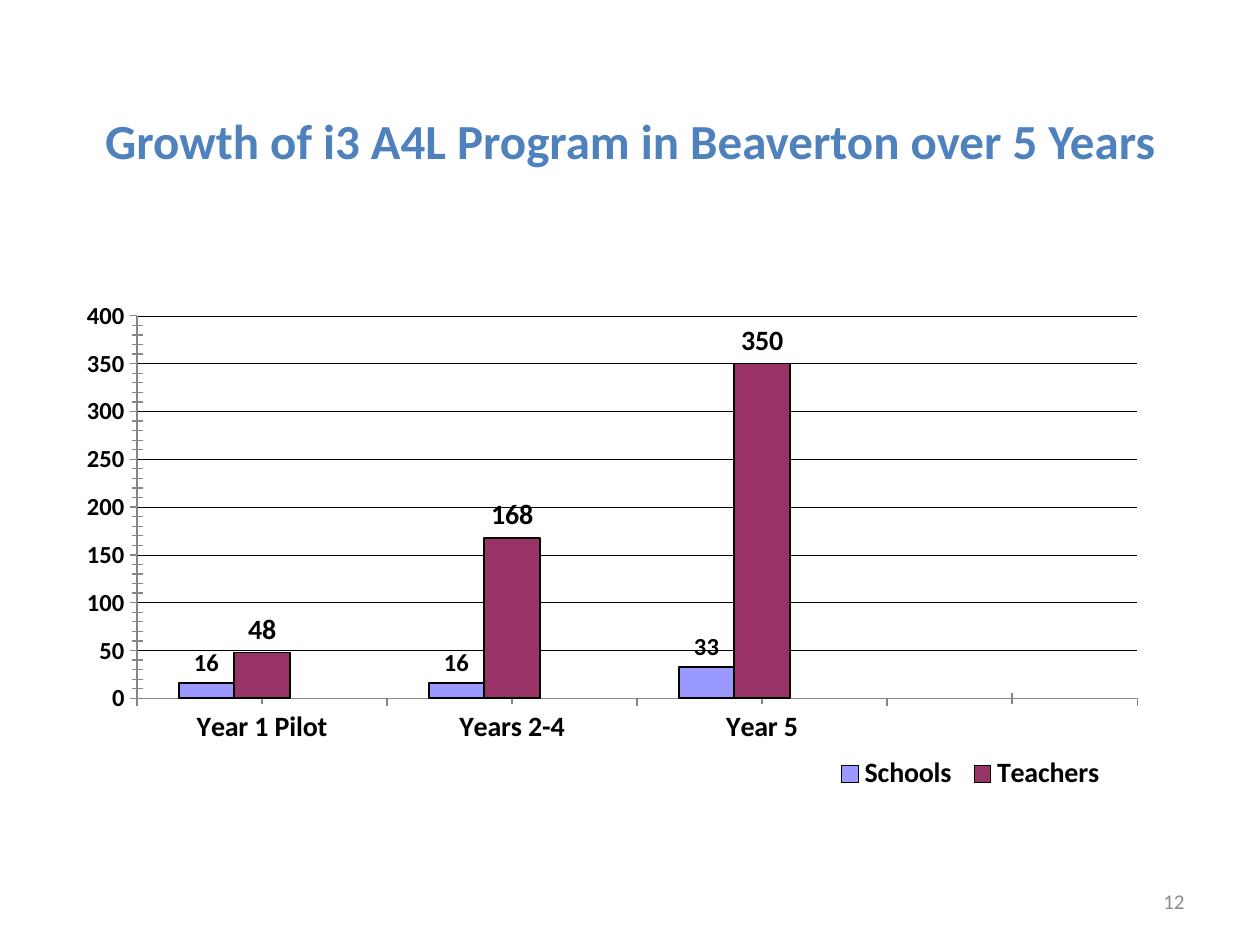
"""Build the slide on program growth with a clustered column chart."""
from dataclasses import dataclass
from typing import Optional

from lxml.etree import SubElement
from pptx import Presentation
from pptx.chart.data import CategoryChartData
from pptx.dml.color import RGBColor
from pptx.enum.chart import XL_CHART_TYPE as ChartType
from pptx.enum.chart import XL_LABEL_POSITION as LabelPosition
from pptx.enum.chart import XL_LEGEND_POSITION as LegendPosition
from pptx.enum.chart import XL_TICK_MARK as TickMark
from pptx.enum.text import MSO_ANCHOR as Anchor
from pptx.enum.text import PP_ALIGN as Align
from pptx.oxml.ns import qn
from pptx.util import Pt

FONT = "Calibri"
BLACK = "000000"
AXIS_GRAY = "868686"


@dataclass
class Box:
    left: float
    top: float
    width: float
    height: float

    def lengths(self):
        return [Pt(value) for value in (self.left, self.top, self.width, self.height)]


@dataclass
class ColumnSeries:
    name: str
    values: list[Optional[int]]
    color: str
    label_size: float


CATEGORIES = ["Year 1 Pilot", "Years 2-4", "Year 5", ""]
SERIES = [
    ColumnSeries("Schools", [16, 16, 33, None], "9999FF", 14),
    ColumnSeries("Teachers", [48, 168, 350, None], "993366", 16),
    ColumnSeries("Series 3", [None] * 4, "FFFFCC", 8),
]


def rgb(color: str) -> RGBColor:
    return RGBColor.from_string(color)


def format_font(font, size: float, color: str = BLACK, bold: bool = True) -> None:
    font.name, font.size, font.bold = FONT, Pt(size), bold
    font.color.rgb = rgb(color)


def format_line(line, width: float, color: str) -> None:
    line.width = Pt(width)
    line.color.rgb = rgb(color)


def write_text(shape, text: str, *, size: float, color: str,
               bold: bool = False, align=Align.LEFT) -> None:
    frame = shape.text_frame
    frame.word_wrap = True
    frame.vertical_anchor = Anchor.MIDDLE
    paragraph = frame.paragraphs[0]
    paragraph.alignment = align
    run = paragraph.add_run()
    run.text = text
    format_font(run.font, size, color, bold)


def set_layout(parent, index: int, fractions: dict[str, float], inner: bool = False) -> None:
    for old in parent.findall(qn("c:layout")):
        parent.remove(old)
    layout = SubElement(parent, qn("c:layout"))
    parent.insert(index, layout)
    manual = SubElement(layout, qn("c:manualLayout"))
    settings = {"layoutTarget": "inner"} if inner else {}
    settings |= {"xMode": "edge", "yMode": "edge"} | fractions
    for tag, value in settings.items():
        SubElement(manual, qn(f"c:{tag}")).set("val", str(value))


def format_axis(axis, size: float, minor_tick) -> None:
    axis.major_tick_mark = TickMark.OUTSIDE
    axis.minor_tick_mark = minor_tick
    format_font(axis.tick_labels.font, size)
    format_line(axis.format.line, 0.75, AXIS_GRAY)


def format_series(series, style: ColumnSeries) -> None:
    series.format.fill.solid()
    series.format.fill.fore_color.rgb = rgb(style.color)
    format_line(series.format.line, 1, BLACK)
    labels = series.data_labels
    labels.show_value = True
    labels.position = LabelPosition.OUTSIDE_END
    format_font(labels.font, style.label_size)


def format_legend(chart) -> None:
    chart.has_legend = True
    chart.legend.position = LegendPosition.RIGHT
    chart.legend.include_in_layout = False
    format_font(chart.legend.font, 16)
    legend = chart.element.find(".//" + qn("c:legend"))
    set_layout(legend, 1, {"x": 0.62, "y": 0.84, "w": 0.23, "h": 0.06})
    entry = SubElement(legend, qn("c:legendEntry"))
    SubElement(entry, qn("c:idx")).set("val", "2")
    SubElement(entry, qn("c:delete")).set("val", "1")
    legend.insert(1, entry)


def add_growth_chart(slide, box: Box) -> None:
    data = CategoryChartData(number_format="General")
    data.categories = CATEGORIES
    for style in SERIES:
        data.add_series(style.name, style.values)
    chart = slide.shapes.add_chart(ChartType.COLUMN_CLUSTERED, *box.lengths(), data).chart
    chart.has_title = False
    format_font(chart.font, 8)

    plot = chart.plots[0]
    plot.vary_by_categories = False
    plot.gap_width, plot.overlap = 150, 0
    for series, style in zip(plot.series, SERIES):
        format_series(series, style)

    format_axis(chart.category_axis, 16, TickMark.CROSS)
    value_axis = chart.value_axis
    format_axis(value_axis, 14, TickMark.CROSS)
    value_axis.minimum_scale, value_axis.maximum_scale = 0, 400
    value_axis.major_unit, value_axis.minor_unit = 50, 10
    value_axis.has_major_gridlines = True
    format_line(value_axis.major_gridlines.format.line, 0.25, BLACK)

    format_legend(chart)
    plot_area = chart.element.find(".//" + qn("c:plotArea"))
    set_layout(plot_area, 0, {"x": 0.06, "y": 0.08, "w": 0.81, "h": 0.66}, inner=True)


def main() -> None:
    presentation = Presentation()
    presentation.slide_width, presentation.slide_height = Pt(720), Pt(540)
    slide = presentation.slides.add_slide(presentation.slide_layouts[5])

    title = slide.shapes.title
    title.left, title.top, title.width, title.height = Box(36, 21.6, 648, 116.64).lengths()
    write_text(title, "Growth of i3 A4L Program in Beaverton over 5 Years",
               size=28, color="4F81BD", bold=True, align=Align.CENTER)

    add_growth_chart(slide, Box(36, 154, 705.6, 331.2))

    number = slide.shapes.add_textbox(*Box(516, 500.5, 168, 28.75).lengths())
    write_text(number, "12", size=12, color="8C8C8C", align=Align.RIGHT)
    presentation.save("out.pptx")


if __name__ == "__main__":
    main()
